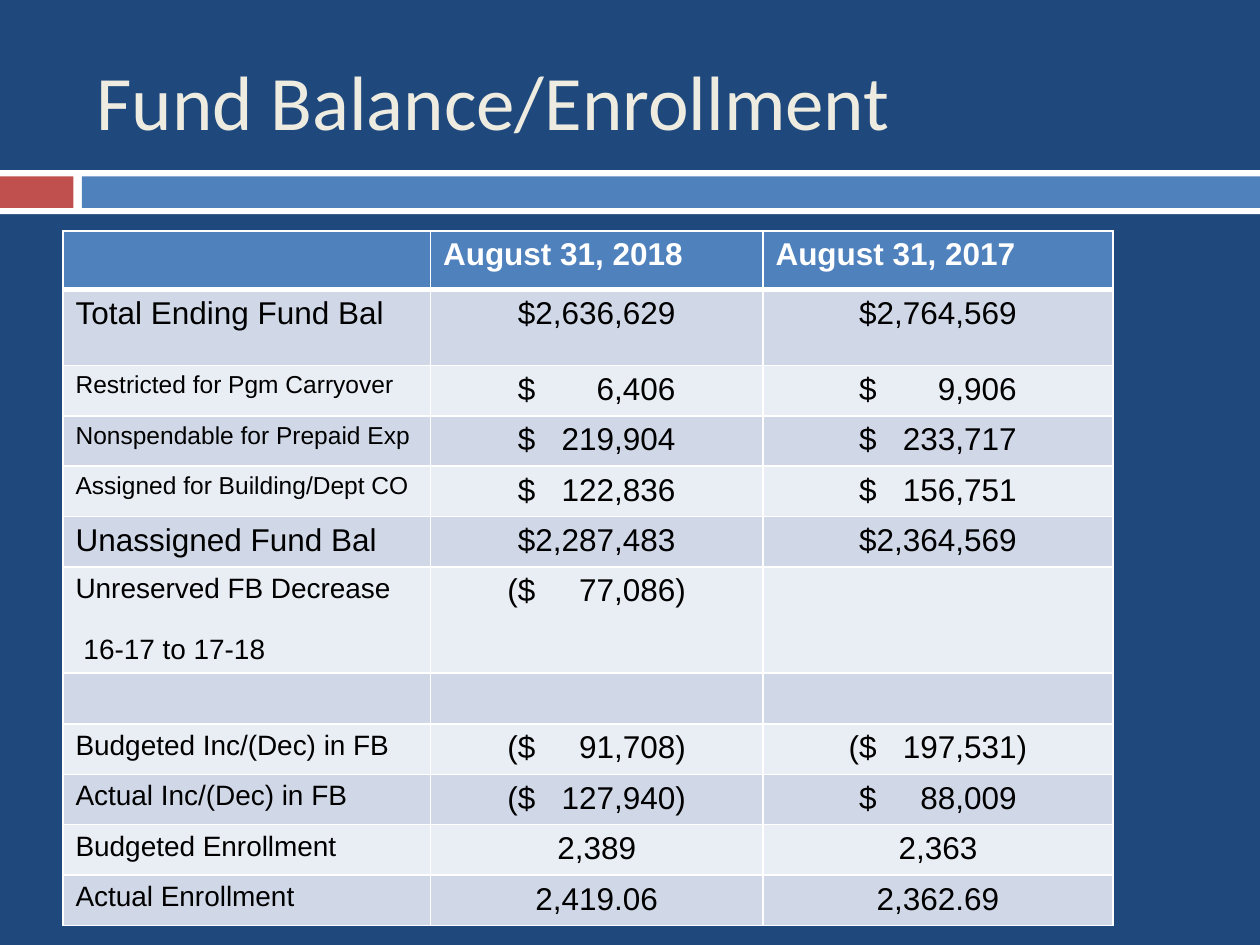
from dataclasses import dataclass

from lxml.etree import SubElement
from pptx import Presentation
from pptx.dml.color import RGBColor as Color
from pptx.enum.shapes import MSO_SHAPE as Shape
from pptx.enum.text import MSO_ANCHOR as Anchor, PP_ALIGN as Align
from pptx.oxml.ns import qn
from pptx.util import Pt


@dataclass(frozen=True)
class Theme:
    navy: str = "1F497D"
    blue: str = "4F81BD"
    red: str = "C0504D"
    white: str = "FFFFFF"
    cream: str = "EEECE1"
    black: str = "000000"
    bands: tuple = ("D0D8E8", "E9EDF4")
    title_font: str = "Calibri"
    body_font: str = "Arial"
    title_size: int = 44
    large: int = 18
    medium: int = 16
    small: int = 14


theme = Theme()


def write(para, text, size=theme.large, color=theme.black, font=theme.body_font,
          bold=False, align=Align.LEFT, before=0, indent=0, tab=None):
    """Add formatted text; tab is the position of a right-aligned tab stop."""
    para.alignment = align
    para.space_before = Pt(before)
    properties = para._p.get_or_add_pPr()
    properties.set("marL", str(Pt(indent)))
    if tab:
        stops = SubElement(properties, qn("a:tabLst"))
        SubElement(stops, qn("a:tab"), pos=str(Pt(tab)), algn="r")
    span = para.add_run()
    span.text = text
    span.font.size = Pt(size)
    span.font.name = font
    span.font.bold = bold
    span.font.color.rgb = Color.from_string(color)


def paint_cell(cell, fill, widths):
    """Fill a cell and give it white borders, widths by side."""
    properties = cell._tc.get_or_add_tcPr()
    for side in ("L", "R", "T", "B"):
        line = SubElement(properties, qn(f"a:ln{side}"), w=str(Pt(widths.get(side, 1))))
        solid = SubElement(line, qn("a:solidFill"))
        SubElement(solid, qn("a:srgbClr"), val=theme.white)
    cell.fill.solid()
    cell.fill.fore_color.rgb = Color.from_string(fill)


deck = Presentation()
deck.slide_width, deck.slide_height = Pt(720), Pt(540)
page = deck.slides.add_slide(deck.slide_layouts[5])
page.background.fill.solid()
page.background.fill.fore_color.rgb = Color.from_string(theme.navy)

# Divider: white strip with a red and a blue bar
for left, top, width, height, color in (
    (0, 97.2, 720, 25.2, theme.white),
    (0, 100.8, 42, 18, theme.red),
    (46.8, 100.8, 673.2, 18, theme.blue),
):
    bar = page.shapes.add_shape(Shape.RECTANGLE, Pt(left), Pt(top), Pt(width), Pt(height))
    bar.shadow.inherit = False
    bar.fill.solid()
    bar.fill.fore_color.rgb = Color.from_string(color)
    bar.line.fill.background()

# Title
title = page.shapes.title
title.left, title.top, title.width, title.height = Pt(48), Pt(18), Pt(642), Pt(78)
title.text_frame.vertical_anchor = Anchor.MIDDLE
write(title.text_frame.paragraphs[0], "Fund Balance/Enrollment", size=theme.title_size,
      color=theme.cream, font=theme.title_font)

# Table content: label size, label, one amount per year; a tab splits sign and number
headings = ("", "August 31, 2018", "August 31, 2017")
rows = (
    (theme.large, "Total Ending Fund Bal", "$2,636,629", "$2,764,569"),
    (theme.small, "Restricted for Pgm Carryover", "$\t6,406", "$\t9,906"),
    (theme.small, "Nonspendable for Prepaid Exp", "$\t219,904", "$\t233,717"),
    (theme.small, "Assigned for Building/Dept CO", "$\t122,836", "$\t156,751"),
    (theme.large, "Unassigned Fund Bal", "$2,287,483", "$2,364,569"),
    (theme.medium, "Unreserved FB Decrease\n16-17 to 17-18", "($\t77,086)", ""),
    (theme.medium, "", "", ""),
    (theme.medium, "Budgeted Inc/(Dec) in FB", "($\t91,708)", "($\t197,531)"),
    (theme.medium, "Actual Inc/(Dec) in FB", "($\t127,940)", "$\t88,009"),
    (theme.medium, "Budgeted Enrollment", "2,389", "2,363"),
    (theme.medium, "Actual Enrollment", "2,419.06", "2,362.69"),
)
column_widths = (210, 190, 200)
row_height = 28.8
special_heights = {0: 33.6, 1: 43.2, 6: 60.5}
amount_width, bracket_width = 90, 6

frame = page.shapes.add_table(len(rows) + 1, len(column_widths), Pt(36), Pt(132),
                              Pt(sum(column_widths)), Pt(398))
table = frame.table
for column, width in zip(table.columns, column_widths):
    column.width = Pt(width)
for index, row in enumerate(table.rows):
    row.height = Pt(special_heights.get(index, row_height))

# Header row
for index, heading in enumerate(headings):
    cell = table.cell(0, index)
    paint_cell(cell, theme.blue, {"B": 3})
    if heading:
        write(cell.text_frame.paragraphs[0], heading, color=theme.white, bold=True)

# Body rows
for row_index, (label_size, label, *amounts) in enumerate(rows, start=1):
    label_cell, *amount_cells = table.rows[row_index].cells
    for cell in (label_cell, *amount_cells):
        paint_cell(cell, theme.bands[(row_index - 1) % 2], {"T": 3 if row_index == 1 else 1})

    label_frame = label_cell.text_frame
    for line_index, line in enumerate(label.split("\n") if label else ()):
        para = label_frame.add_paragraph() if line_index else label_frame.paragraphs[0]
        write(para, line, size=label_size, before=17 * line_index, indent=4.5 * line_index)

    for cell, amount, width in zip(amount_cells, amounts, column_widths[1:]):
        para = cell.text_frame.paragraphs[0]
        if "\t" in amount:
            span_width = amount_width + 2 * bracket_width * amount.startswith("(")
            cell.margin_left = Pt((width - span_width) / 2)
            write(para, amount, tab=span_width)
        elif amount:
            write(para, amount, align=Align.CENTER)

deck.save("out.pptx")
